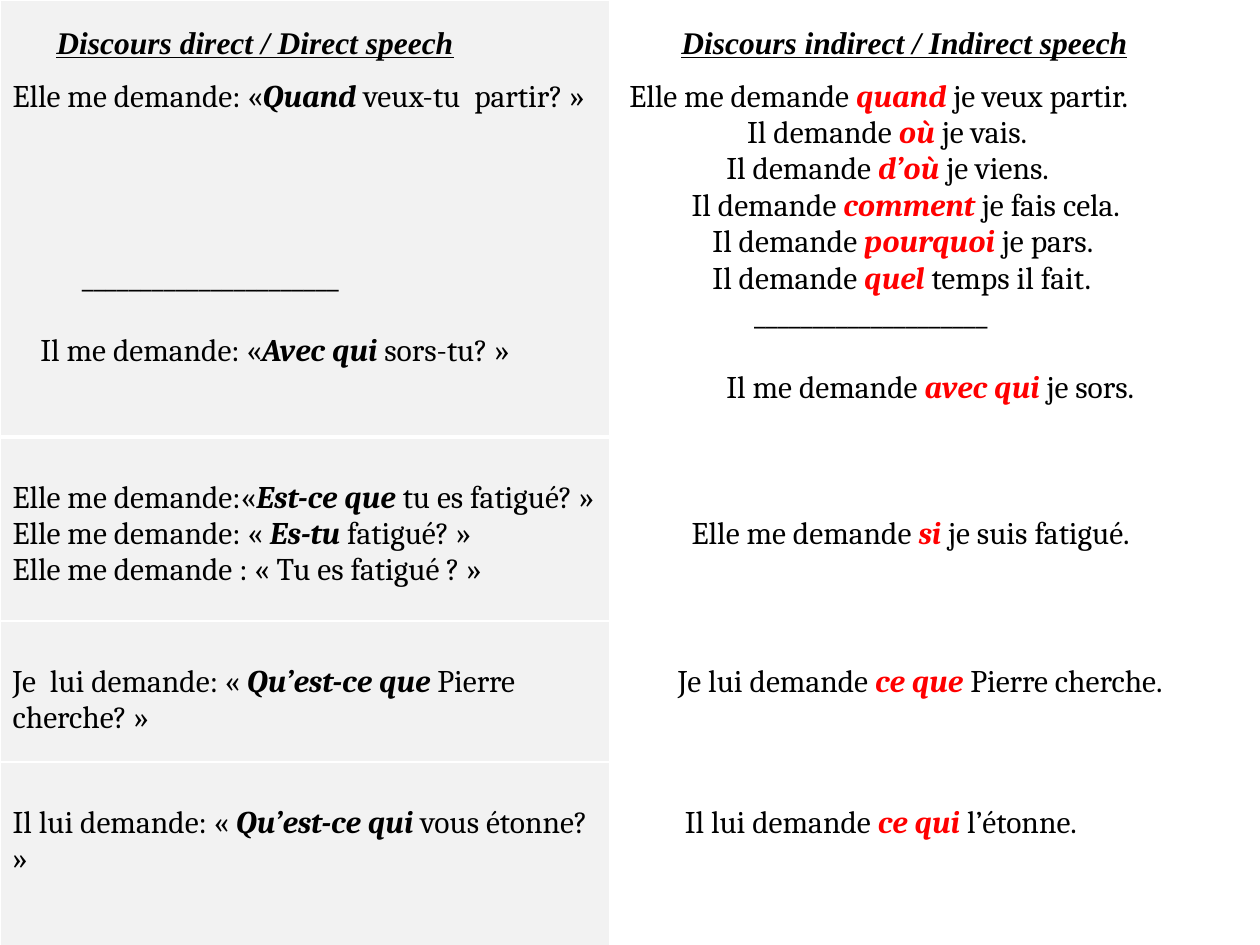
import pptx
import pptx.dml.color
import pptx.enum.text
import pptx.oxml.ns
import pptx.util
from lxml import etree

THEME = {
    "body": {"name": "Cambria", "size": pptx.util.Pt(18)},
    "title": {"name": "Times New Roman", "size": pptx.util.Pt(18),
              "bold": True, "italic": True, "underline": True},
    "ink": "000000",
    "border": "FFFFFF",
    "fills": ("F2F2F2", "FFFFFF"),
    "accents": ("000000", "FF0000"),
}
SLIDE_WIDTH, SLIDE_HEIGHT = 10, 7.5
COLUMN_SHARES = (0.484, 0.516)
ROW_HEIGHTS = (3.47, 1.46, 1.12, 1.46)
LINE_HEIGHT = 0.288
SPACE_WIDTH = 0.055
CELL_INSET = 0.05
THIN, THICK = 1, 3

TITLES = (
    (0.035, 0.39, "Discours direct / Direct speech"),
    (0.531, 0.433, "Discours indirect / Indirect speech"),
)

# Each line: empty lines above, indent in spaces, text with *emphasis*.
ROWS = (
    (
        ((2, 0, "Elle me demande: «*Quand* veux-tu  partir? »"),
         (4, 10, "______________________"),
         (1, 4, "Il me demande: «*Avec qui *sors-tu? »")),
        ((2, 1, "Elle me demande *quand* je veux partir."),
         (0, 18, "Il demande *où* je vais."),
         (0, 15, "Il demande *d’où* je viens."),
         (0, 10, "Il demande *comment* je fais cela."),
         (0, 13, "Il demande *pourquoi* je pars."),
         (0, 13, "Il demande *quel* temps il fait."),
         (0, 19, "____________________"),
         (1, 15, "Il me demande *avec qui *je sors.")),
    ),
    (
        ((1, 0, "Elle me demande:«*Est-ce que *tu es fatigué? »"),
         (0, 0, "Elle me demande: « *Es-tu* fatigué? »"),
         (0, 0, "Elle me demande : « Tu es fatigué ? »")),
        ((2, 10, "Elle me demande *si* je suis fatigué."),),
    ),
    (
        ((1, 0, "Je  lui demande: « *Qu’est-ce que *Pierre cherche? »"),),
        ((1, 8, "Je lui demande *ce que *Pierre cherche."),),
    ),
    (
        ((1, 0, "Il lui demande: « *Qu’est-ce qui *vous étonne? »"),),
        ((1, 9, "Il lui demande *ce qui *l’étonne."),),
    ),
)


def apply_format(target, values):
    for name, value in values.items():
        setattr(target, name, value)


def add_run(paragraph, text, font_values, color):
    run = paragraph.add_run()
    run.text = text
    apply_format(run.font, font_values)
    run.font.color.rgb = pptx.dml.color.RGBColor.from_string(color)


def add_line(paragraph, indent, text, accent):
    properties = paragraph._p.get_or_add_pPr()
    properties.set("marL", str(pptx.util.Inches(indent * SPACE_WIDTH)))
    properties.set("indent", "0")
    for index, segment in enumerate(text.split("*")):
        emphasis = index % 2 == 1
        values = {**THEME["body"], "bold": emphasis, "italic": emphasis}
        add_run(paragraph, segment, values, accent if emphasis else THEME["ink"])


def set_borders(cell, widths):
    properties = cell._tc.get_or_add_tcPr()
    qualified = pptx.oxml.ns.qn
    for index, (side, width) in enumerate(widths.items()):
        line = etree.Element(qualified(f"a:ln{side}"), w=str(pptx.util.Pt(width)))
        fill = etree.SubElement(line, qualified("a:solidFill"))
        etree.SubElement(fill, qualified("a:srgbClr"), val=THEME["border"])
        properties.insert(index, line)


def fill_cell(cell, lines, row, column):
    cell.fill.solid()
    cell.fill.fore_color.rgb = pptx.dml.color.RGBColor.from_string(THEME["fills"][column])
    set_borders(cell, {"L": THIN, "R": THIN,
                       "T": THICK if row == 1 else THIN,
                       "B": THICK if row == 0 else THIN})
    cell.margin_top = pptx.util.Inches(CELL_INSET + lines[0][0] * LINE_HEIGHT)
    for index, (gap, indent, text) in enumerate(lines):
        paragraph = cell.text_frame.paragraphs[0] if index == 0 else cell.text_frame.add_paragraph()
        if index and gap:
            paragraph.space_before = pptx.util.Inches(gap * LINE_HEIGHT)
        add_line(paragraph, indent, text, THEME["accents"][column])


def add_speech_table(slide):
    shape = slide.shapes.add_table(
        len(ROWS), len(COLUMN_SHARES), 0, 0,
        pptx.util.Inches(SLIDE_WIDTH), pptx.util.Inches(sum(ROW_HEIGHTS)))
    table = shape.table
    apply_format(table, {"first_row": False, "horz_banding": False})
    for column, share in zip(table.columns, COLUMN_SHARES):
        column.width = pptx.util.Inches(share * SLIDE_WIDTH)
    for row, height in zip(table.rows, ROW_HEIGHTS):
        row.height = pptx.util.Inches(height)
    for row, cells in enumerate(ROWS):
        for column, lines in enumerate(cells):
            fill_cell(table.cell(row, column), lines, row, column)


def add_title(slide, left, width, text):
    box = slide.shapes.add_textbox(
        pptx.util.Inches(left * SLIDE_WIDTH), pptx.util.Inches(0.13),
        pptx.util.Inches(width * SLIDE_WIDTH), pptx.util.Inches(0.4))
    apply_format(box.text_frame, {
        "word_wrap": False,
        "auto_size": pptx.enum.text.MSO_AUTO_SIZE.SHAPE_TO_FIT_TEXT,
    })
    add_run(box.text_frame.paragraphs[0], text, THEME["title"], THEME["ink"])


def main():
    presentation = pptx.Presentation()
    apply_format(presentation, {
        "slide_width": pptx.util.Inches(SLIDE_WIDTH),
        "slide_height": pptx.util.Inches(SLIDE_HEIGHT),
    })
    slide = presentation.slides.add_slide(presentation.slide_layouts[6])
    add_speech_table(slide)
    for left, width, text in TITLES:
        add_title(slide, left, width, text)
    presentation.save("out.pptx")


if __name__ == "__main__":
    main()
